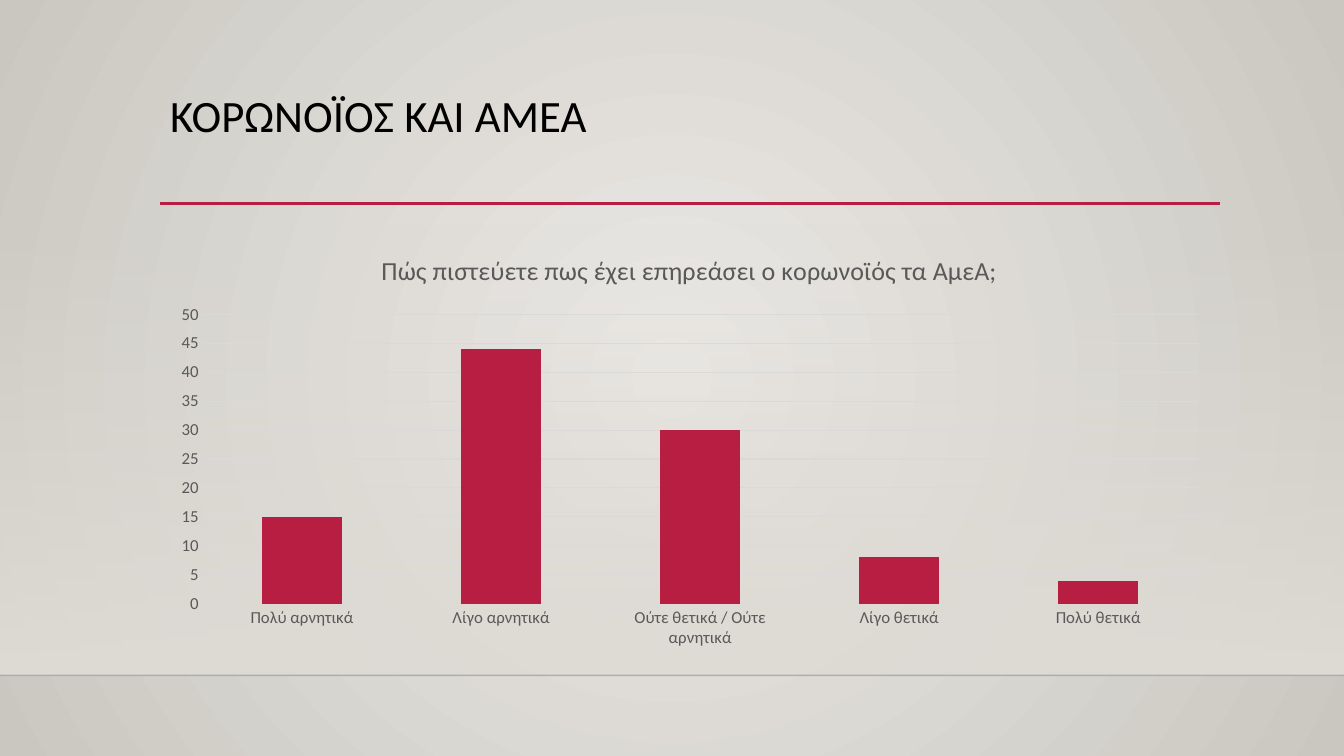
"""Build a slide with a column chart on how the coronavirus affected people with disabilities."""
from lxml import etree
from pptx import Presentation
from pptx.chart.data import CategoryChartData
from pptx.dml.color import RGBColor
from pptx.enum.chart import XL_CHART_TYPE as CT, XL_TICK_MARK as TM
from pptx.enum.shapes import MSO_CONNECTOR as MC, MSO_SHAPE as MS
from pptx.enum.text import MSO_ANCHOR as MA
from pptx.oxml import parse_xml
from pptx.oxml.ns import nsdecls, qn
from pptx.util import Inches, Pt

TITLE = "ΚΟΡΩΝΟΪΟΣ ΚΑΙ ΑΜΕΑ"
QUESTION = "Πώς πιστεύετε πως έχει επηρεάσει ο κορωνοϊός τα ΑμεΑ;"
ANSWERS = {
    "Πολύ αρνητικά": 15,
    "Λίγο αρνητικά": 44,
    "Ούτε θετικά / Ούτε αρνητικά": 30,
    "Λίγο θετικά": 8,
    "Πολύ θετικά": 4,
}
RED, GREY, GRID = "B71E42", "595959", "D9D9D9"
FONT = "Calibri"
W, H = 13.33, 7.5
LEFT, WIDTH = 1.59, 10.5
FLOOR_TOP, FLOOR = 2.21, 6.7
RULES = [
    {"x": 0, "end": W, "y": FLOOR, "color": "000001", "width": 1, "alpha": 20},
    {"x": LEFT, "end": 12.1, "y": 2.02, "color": RED, "width": 2.5, "alpha": 100},
]
CIRCLE = ('<a:path path="circle"><a:fillToRect l="50000" t="50000" '
          'r="50000" b="50000"/></a:path>')
DOWN = '<a:lin ang="5400000" scaled="0"/>'


def rgb(value):
    return RGBColor.from_string(value)


def box(*lengths):
    return [Inches(v) for v in lengths]


def set_font(font, size, color):
    values = {"name": FONT, "size": Pt(size), "bold": False}
    for key, value in values.items():
        setattr(font, key, value)
    font.color.rgb = rgb(color)


def set_gradient(parent, stops, direction):
    marks = "".join(
        f'<a:gs pos="{pos * 1000}"><a:srgbClr val="{color}">'
        f'<a:alpha val="{alpha * 1000}"/></a:srgbClr></a:gs>'
        for pos, color, alpha in stops)
    fill = parse_xml(f'<a:gradFill {nsdecls("a")} rotWithShape="1">'
                     f'<a:gsLst>{marks}</a:gsLst>{direction}</a:gradFill>')
    parent.replace(parent.find(qn("a:solidFill")), fill)


def add_backdrop(s):
    s.background.fill.solid()
    set_gradient(s.background._cSld.bg.bgPr,
                 [(0, "ECEAE7", 100), (100, "CAC7C1", 100)], CIRCLE)
    sp = s.shapes.add_shape(MS.RECTANGLE, *box(0, FLOOR_TOP, W, FLOOR - FLOOR_TOP))
    sp.shadow.inherit = False
    sp.line.fill.background()
    sp.fill.solid()
    set_gradient(sp._element.spPr, [(0, "DFDBD5", 0), (100, "DFDBD5", 100)], DOWN)


def add_rule(s, x, end, y, color, width, alpha):
    ln = s.shapes.add_connector(MC.STRAIGHT, *box(x, y, end, y))
    ln.line.color.rgb = rgb(color)
    ln.line.width = Pt(width)
    spPr = ln._element.spPr
    clr = spPr.find(".//" + qn("a:srgbClr"))
    etree.SubElement(clr, qn("a:alpha"), val=str(alpha * 1000))
    etree.SubElement(spPr, qn("a:effectLst"))


def add_title(s):
    tf = s.shapes.add_textbox(*box(LEFT, 0.88, WIDTH, 1.15)).text_frame
    tf.word_wrap = True
    tf.vertical_anchor = MA.TOP
    p = tf.paragraphs[0]
    p.line_spacing = 0.9
    r = p.add_run()
    r.text = TITLE
    set_font(r.font, 32, "000000")


def add_answers(s):
    data = CategoryChartData()
    data.categories = list(ANSWERS)
    data.add_series("Series 1", list(ANSWERS.values()))
    chart = s.shapes.add_chart(CT.COLUMN_STACKED, *box(LEFT, 2.32, WIDTH, 4.19),
                               data).chart
    set_font(chart.font, 10, "000000")
    chart.has_legend = False
    chart.has_title = True
    p = chart.chart_title.text_frame.paragraphs[0]
    r = p.add_run()
    r.text = QUESTION
    set_font(r.font, 18.6, GREY)
    plot = chart.plots[0]
    for key, value in {"gap_width": 150, "overlap": 100,
                       "vary_by_categories": False}.items():
        setattr(plot, key, value)
    fill = plot.series[0].format.fill
    fill.solid()
    fill.fore_color.rgb = rgb(RED)
    for axis in (chart.category_axis, chart.value_axis):
        axis.major_tick_mark = axis.minor_tick_mark = TM.NONE
        axis.format.line.fill.background()
        set_font(axis.tick_labels.font, 12, GREY)
    for key, value in {"minimum_scale": 0, "maximum_scale": 50, "major_unit": 5,
                       "has_major_gridlines": True}.items():
        setattr(chart.value_axis, key, value)
    grid = chart.value_axis.major_gridlines.format.line
    grid.color.rgb = rgb(GRID)
    grid.width = Pt(0.75)


def main():
    prs = Presentation()
    prs.slide_width, prs.slide_height = box(W, H)
    s = prs.slides.add_slide(prs.slide_layouts[6])
    add_backdrop(s)
    for rule in RULES:
        add_rule(s, **rule)
    add_title(s)
    add_answers(s)
    prs.save("out.pptx")


if __name__ == "__main__":
    main()
